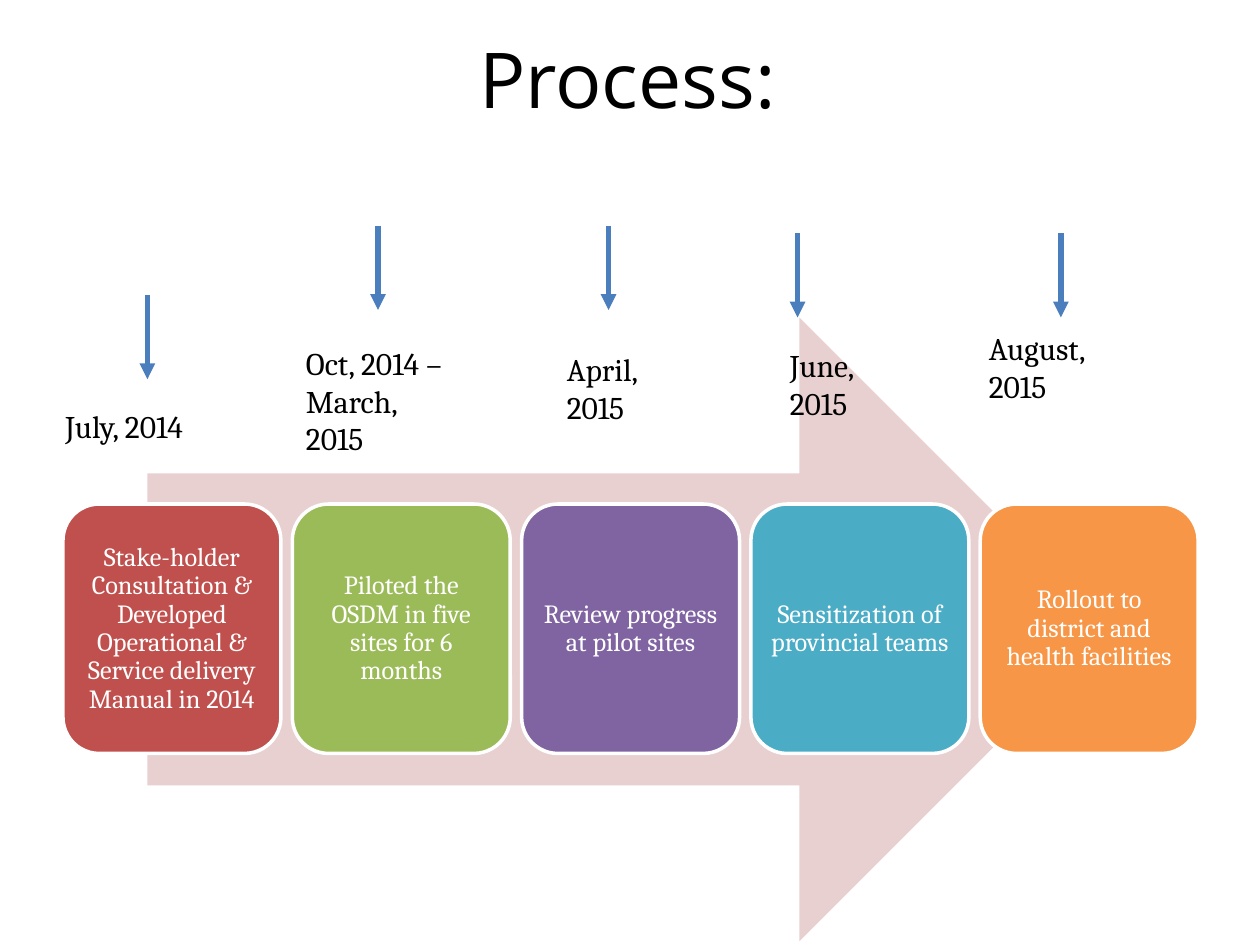
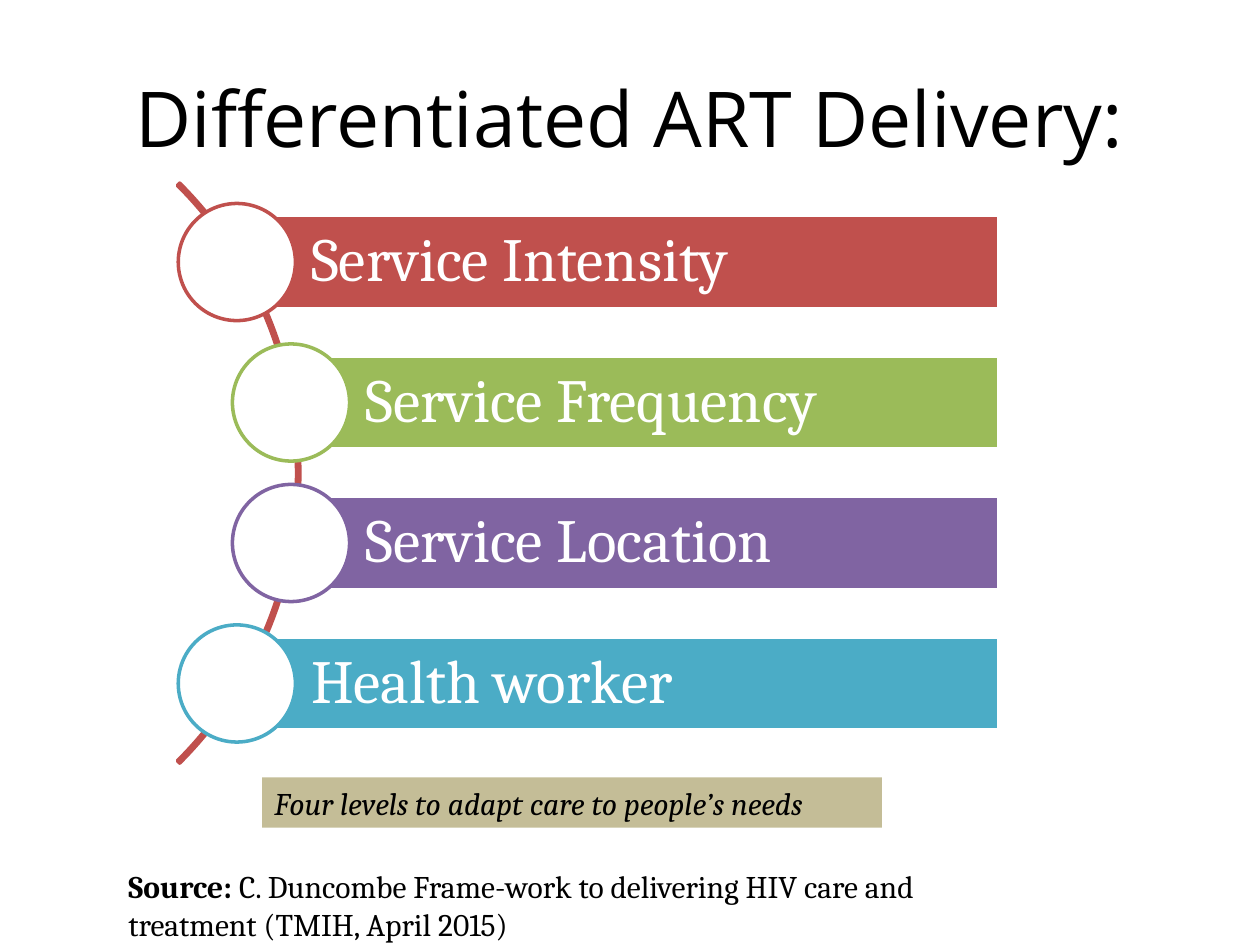
from lxml.etree import SubElement
from pptx import Presentation
from pptx.dml.color import RGBColor
from pptx.enum.shapes import MSO_CONNECTOR, MSO_SHAPE
from pptx.enum.text import MSO_ANCHOR, MSO_AUTO_SIZE, PP_ALIGN
from pptx.oxml.ns import qn
from pptx.util import Inches, Pt

RED, GREEN, PURPLE, TEAL, ORANGE = "C0504D", "9BBB59", "8064A2", "4BACC6", "F79646"
WHITE, BLACK, PINK, BLUE, TAN = "FFFFFF", "000000", "E8D0D0", "4B7EBC", "C4BD97"
BODY_FONT, TITLE_FONT = "Cambria", "Open Sans"

STAGES = [
    ("Stake-holder Consultation & Developed Operational & Service delivery Manual in 2014", RED),
    ("Piloted the OSDM in five sites for 6 months", GREEN),
    ("Review progress at pilot sites", PURPLE),
    ("Sensitization of provincial teams", TEAL),
    ("Rollout to district and health facilities", ORANGE),
]
DATES = [
    ("July, 2014", (0.42, 3.18, 1.5, 0.4), (1.17, 2.34)),
    ("Oct, 2014 –March, 2015", (2.33, 2.68, 1.33, 1.01), (3, 1.79)),
    ("April, 2015", (4.4, 2.73, 1.17, 0.71), (4.83, 1.79)),
    ("June, 2015", (6.17, 2.7, 0.84, 0.71), (6.33, 1.85)),
    ("August, 2015", (7.75, 2.56, 1.17, 0.71), (8.42, 1.85)),
]
LEVELS = [
    ("Service Intensity", RED, 1.88),
    ("Service Frequency", GREEN, 2.31),
    ("Service Location", PURPLE, 2.31),
    ("Health worker", TEAL, 1.88),
]
MOTTO = "Four levels to adapt care to people’s needs"
SOURCE = [("Source:", True), (" C. Duncombe Frame-work to delivering HIV care and treatment (TMIH, April 2015)", False)]

STAGE_LEFT, STAGE_STEP, DATE_ARROW = 0.5, 1.82, 0.67
LEVEL_TOP, LEVEL_STEP, BAR_RIGHT, BAR_HEIGHT, DOT = 2.08, 1.115, 7.93, 0.74, 0.93


def rgb(value):
    return RGBColor.from_string(value)


def place(box):
    return [Inches(v) for v in box]


def add_run(p, text, size, color=BLACK, font=BODY_FONT, bold=False, italic=False):
    r = p.add_run()
    r.text = text
    r.font.size, r.font.name = Pt(size), font
    r.font.bold, r.font.italic = bold, italic
    r.font.color.rgb = rgb(color)


def set_frame(tf, anchor=MSO_ANCHOR.TOP, insets=(0.1, 0.05, 0.1, 0.05), align=PP_ALIGN.LEFT, spacing=1.0):
    tf.word_wrap = True
    tf.vertical_anchor = anchor
    tf.margin_left, tf.margin_top, tf.margin_right, tf.margin_bottom = place(insets)
    p = tf.paragraphs[0]
    p.alignment, p.line_spacing = align, spacing
    return p


def add_shape(s, kind, box, fill=None, line=None):
    sp = s.shapes.add_shape(kind, *place(box))
    sp.shadow.inherit = False
    if fill:
        sp.fill.solid()
        sp.fill.fore_color.rgb = rgb(fill)
    else:
        sp.fill.background()
    if line:
        sp.line.color.rgb = rgb(line)
        sp.line.width = Pt(2)
    else:
        sp.line.fill.background()
    return sp


def add_text(s, box):
    tf = s.shapes.add_textbox(*place(box)).text_frame
    tf.auto_size = MSO_AUTO_SIZE.SHAPE_TO_FIT_TEXT
    return set_frame(tf)


def add_down_arrow(s, x, y):
    c = s.shapes.add_connector(MSO_CONNECTOR.STRAIGHT, *place((x, y, x, y + DATE_ARROW)))
    c.line.color.rgb = rgb(BLUE)
    c.line.width = Pt(3)
    SubElement(c.line._get_or_add_ln(), qn("a:tailEnd"), type="triangle")
    SubElement(c._element.spPr, qn("a:effectLst"))


def add_slide(prs, title, left, top):
    s = prs.slides.add_slide(prs.slide_layouts[5])
    sp = s.shapes.title
    sp.left, sp.top, sp.width, sp.height = place((left, top, 9, 1.25))
    p = set_frame(sp.text_frame, MSO_ANCHOR.MIDDLE, align=PP_ALIGN.CENTER)
    add_run(p, title, 44, font=TITLE_FONT)
    return s


def build_process(prs):
    s = add_slide(prs, "Process:", 0.48, -0.01)
    add_shape(s, MSO_SHAPE.RIGHT_ARROW, (1.17, 2.52, 7.65, 4.95), PINK)
    for i, (text, color) in enumerate(STAGES):
        box = (STAGE_LEFT + i * STAGE_STEP, 4, 1.73, 1.98)
        card = add_shape(s, MSO_SHAPE.ROUNDED_RECTANGLE, box, color, WHITE)
        p = set_frame(card.text_frame, MSO_ANCHOR.MIDDLE, (0.06,) * 4, PP_ALIGN.CENTER, 0.9)
        add_run(p, text, 15, WHITE)
    for text, box, start in DATES:
        add_down_arrow(s, *start)
        add_run(add_text(s, box), text, 18)


def build_delivery(prs):
    s = add_slide(prs, "Differentiated ART Delivery:", 0.5, 0.3)
    arc = add_shape(s, MSO_SHAPE.BLOCK_ARC, (-4.13, 0.5, 6.51, 6.51), line=RED)
    for i, value in enumerate((189, 27, 0.004)):
        arc.adjustments[i] = value
    for i, (text, color, left) in enumerate(LEVELS):
        middle = LEVEL_TOP + i * LEVEL_STEP
        box = (left, middle - BAR_HEIGHT / 2, BAR_RIGHT - left, BAR_HEIGHT)
        bar = add_shape(s, MSO_SHAPE.RECTANGLE, box, color, WHITE)
        p = set_frame(bar.text_frame, MSO_ANCHOR.MIDDLE, (0.59, 0.1, 0.1, 0.1), spacing=0.9)
        add_run(p, text, 35, WHITE)
        add_shape(s, MSO_SHAPE.OVAL, (left - DOT / 2, middle - DOT / 2, DOT, DOT), WHITE, color)
    p = add_text(s, (0.92, 6.83, 7.08, 0.71))
    for text, bold in SOURCE:
        add_run(p, text, 18, bold=bold)
    motto = add_shape(s, MSO_SHAPE.RECTANGLE, (2.08, 6.17, 4.92, 0.4), TAN)
    add_run(set_frame(motto.text_frame), MOTTO, 18, italic=True)


def main():
    prs = Presentation()
    prs.slide_width, prs.slide_height = Inches(10), Inches(7.5)
    build_process(prs)
    build_delivery(prs)
    prs.save("out.pptx")


if __name__ == "__main__":
    main()
